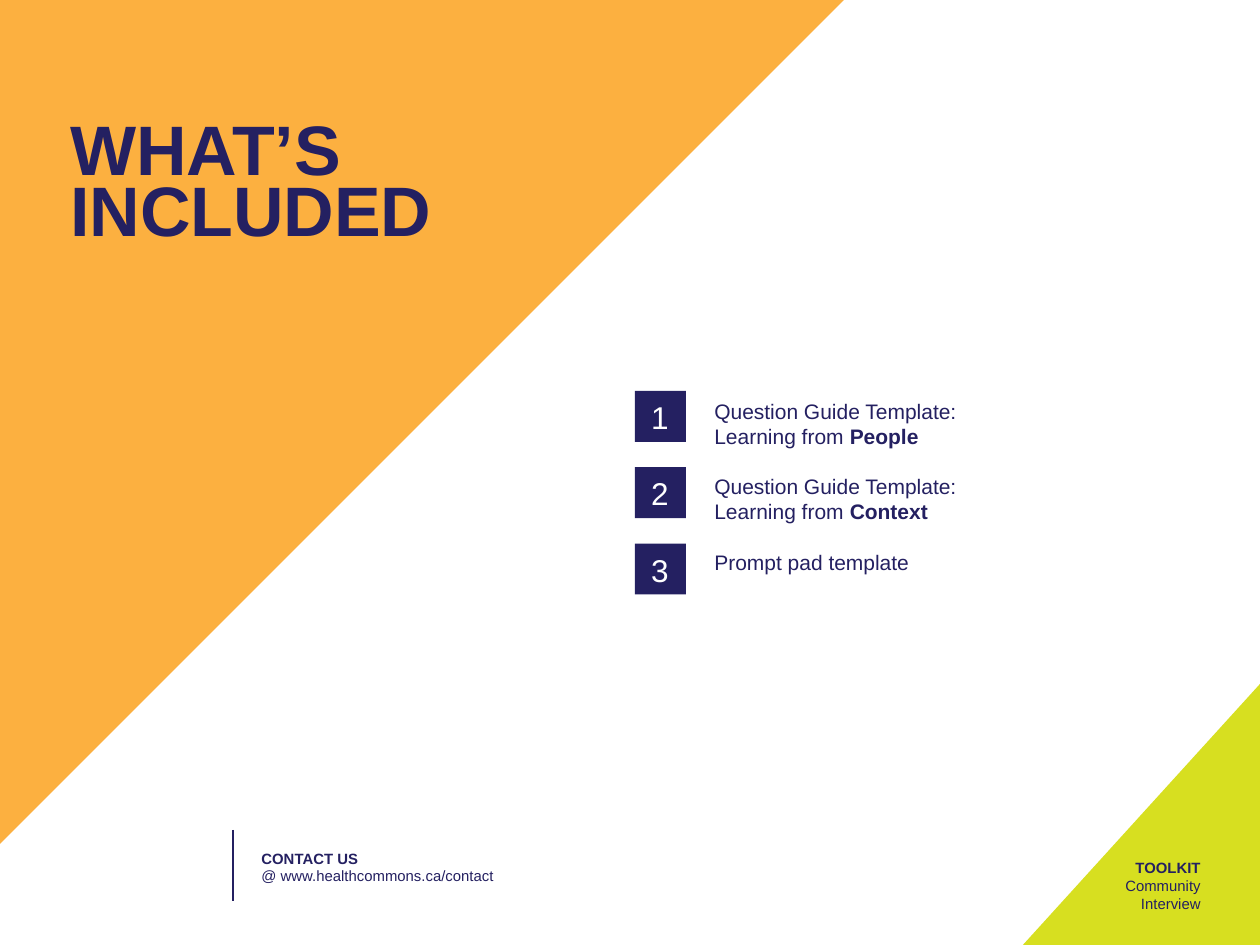
import pptx
import pptx.util
import pptx.dml.color
import pptx.enum.shapes
import pptx.enum.text
import pptx.oxml
from dataclasses import dataclass

PX = 914400 / 126
SHAPES = pptx.enum.shapes.MSO_SHAPE
ALIGN = pptx.enum.text.PP_ALIGN


@dataclass(frozen=True)
class Theme:
    font: str = "Arial"
    navy: str = "242061"
    orange: str = "FCB040"
    lime: str = "D7DF20"
    white: str = "FFFFFF"
    title: float = 40
    number: float = 18
    body: float = 12
    small: float = 8.5


THEME = Theme()


def px(*lengths):
    return [round(length * PX) for length in lengths]


def rgb(color):
    return pptx.dml.color.RGBColor.from_string(color)


def add_filled(shapes, preset, box, color):
    shape = shapes.add_shape(preset, *px(*box))
    shape.shadow.inherit = False
    shape.fill.solid()
    shape.fill.fore_color.rgb = rgb(color)
    shape.line.fill.background()
    return shape


def add_text(shapes, box, lines, size, color=THEME.navy, align=ALIGN.LEFT,
             spacing=None, wrap=True):
    """Each line is a list of (text, bold) spans; returns its paragraphs."""
    frame = shapes.add_textbox(*px(*box)).text_frame
    frame.word_wrap = wrap
    for index, spans in enumerate(lines):
        para = frame.add_paragraph() if index else frame.paragraphs[0]
        para.alignment = align
        if spacing:
            para.line_spacing = pptx.util.Pt(spacing)
        for text, bold in spans:
            span = para.add_run()
            span.text = text
            span.font.name = THEME.font
            span.font.size = pptx.util.Pt(size)
            span.font.bold = bold
            span.font.color.rgb = rgb(color)
    return frame.paragraphs


def add_corner(page, box, color, rotation):
    """Right triangle turned a quarter, so its sides swap around the centre."""
    left, top, width, height = box
    shift = (width - height) / 2
    unturned = (left + shift, top - shift, height, width)
    add_filled(page.shapes, SHAPES.RIGHT_TRIANGLE, unturned, color).rotation = rotation


def add_toolkit(page, box):
    left, top, width, height = box
    add_corner(page, box, THEME.lime, 270)
    add_text(page.shapes, (left + 46, top + 168, 145, 67),
             [[("TOOLKIT", True)], [("Community Interview", False)]],
             THEME.small, align=ALIGN.RIGHT, spacing=10.3)


def add_contact(page, box):
    left, top, width, height = box
    rule = page.shapes.add_connector(pptx.enum.shapes.MSO_CONNECTOR.STRAIGHT,
                                     *px(left, top, left, top + height))
    rule.line.color.rgb = rgb(THEME.navy)
    rule.line.width = pptx.util.Pt(0.75)
    properties = rule._element.spPr
    properties.append(pptx.oxml.parse_xml(
        '<a:effectLst xmlns:a="http://schemas.openxmlformats.org/drawingml/2006/main"/>'))
    add_text(page.shapes, (left + 16, top + 13, width - 16, 49),
             [[("CONTACT US", True)], [("@ www.healthcommons.ca/contact", False)]],
             THEME.small, wrap=False)


def add_title(page, box):
    left, top, width, height = box
    add_corner(page, box, THEME.orange, 90)
    add_text(page.shapes, (left + 58, top + 122, 572, 137),
             [[("WHAT’S", True)], [("INCLUDED", True)]], THEME.title, spacing=35)


def add_contents(page, box):
    left, top, width, height = box
    items = [
        [[("Question Guide Template:", False)],
         [("Learning from ", False), ("People", True)]],
        [[("Question Guide Template:", False)],
         [("Learning from ", False), ("Context", True)]],
        [[("Prompt pad template", False)]],
    ]
    side, pitch, leading = 51, 76.3, 14.4

    # Numbered squares
    for index in range(len(items)):
        y = top + index * pitch
        badge = page.shapes.add_group_shape().shapes
        add_filled(badge, SHAPES.RECTANGLE, (left, y, side, side), THEME.navy)
        add_text(badge, (left - 5, y + 1, 60, 50), [[(str(index + 1), False)]],
                 THEME.number, THEME.white, ALIGN.CENTER)

    # Descriptions, one line of space between items
    paras = add_text(page.shapes, (left + 67, top + 1, width - 67, height),
                     sum(items, []), THEME.body, spacing=leading)
    start = 0
    for item in items[:-1]:
        start += len(item)
        paras[start].space_before = pptx.util.Pt(leading)


def main():
    deck = pptx.Presentation()
    deck.slide_width, deck.slide_height = px(1260, 945)
    page = deck.slides.add_slide(deck.slide_layouts[6])
    page.background.fill.solid()
    page.background.fill.fore_color.rgb = rgb(THEME.white)
    add_toolkit(page, (1022, 684, 238, 262))
    add_contact(page, (233, 830, 277, 71))
    add_title(page, (0, 0, 844, 844))
    add_contents(page, (635, 391, 505, 217))
    deck.save("out.pptx")


if __name__ == "__main__":
    main()
